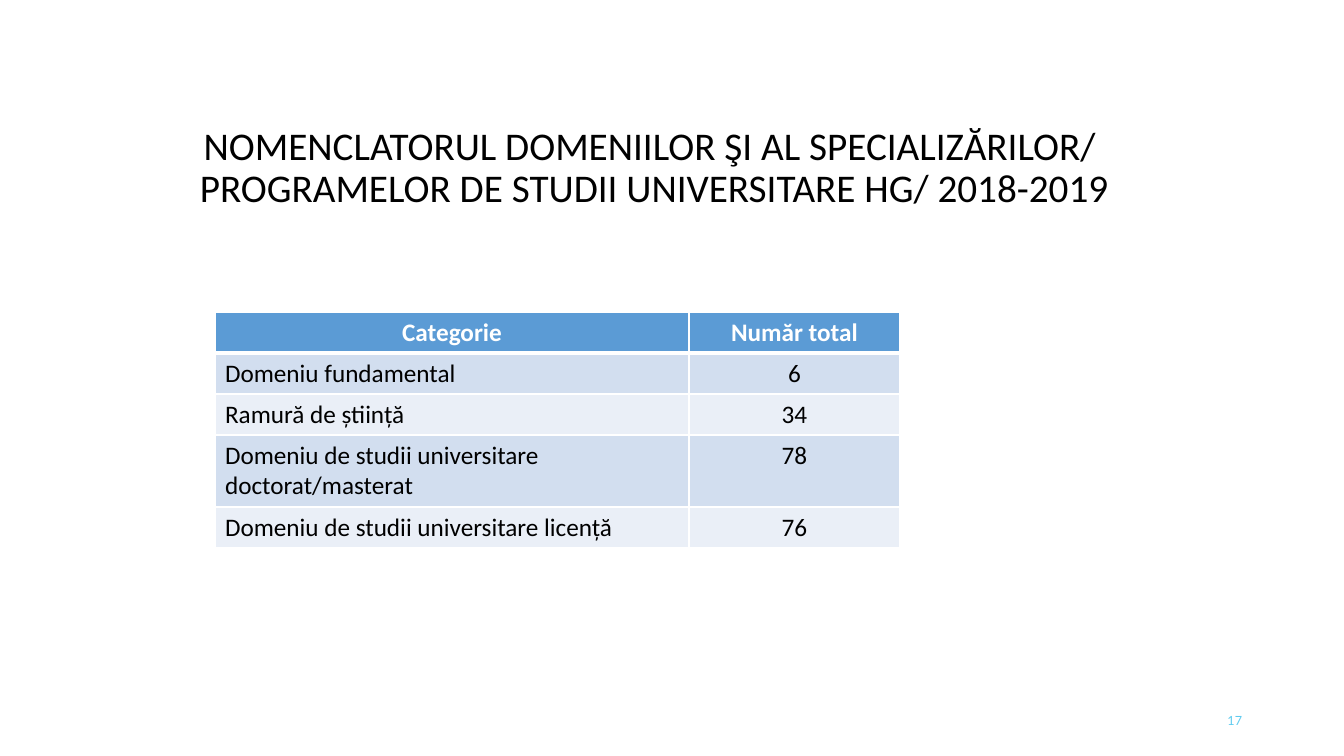
from lxml.etree import SubElement
from pptx import Presentation
from pptx.dml.color import RGBColor
from pptx.enum.text import MSO_ANCHOR as Anchor, MSO_AUTO_SIZE as AutoSize, PP_ALIGN as Align
from pptx.oxml.ns import qn
from pptx.util import Emu, Pt

TITLE = ["NOMENCLATORUL DOMENIILOR ŞI AL SPECIALIZĂRILOR/ ",
         "PROGRAMELOR DE STUDII UNIVERSITARE HG/ 2018-2019"]
ROWS = [
    ("Categorie", "Număr total"),
    ("Domeniu fundamental", "6"),
    ("Ramură de știință", "34"),
    ("Domeniu de studii universitare doctorat/masterat", "78"),
    ("Domeniu de studii universitare licență", "76"),
]
PAGE_NUMBER = "17"

TITLE_BOX = (118, 128, 1072, 81)
NUMBER_BOX = (950, 701, 302, 40)
TABLE_LEFT, TABLE_TOP = 215, 312
COL_WIDTHS = (474, 211)
ROW_HEIGHTS = (41, 41, 41, 72, 41)
HEADER_FILL, BAND_FILLS = "5B9BD5", ("D2DEEF", "EAEFF7")
WHITE, BLACK, CYAN = "FFFFFF", "000000", "5FCBEF"


def px(n):
    return Emu(round(n * 914400 / 100.8))


def rgb(value):
    return RGBColor.from_string(value)


def style(p, size, color, align, name="Calibri", bold=False):
    p.alignment = align
    p.font.size, p.font.name, p.font.bold = Pt(size), name, bold
    p.font.color.rgb = rgb(color)


def set_borders(cell, bottom):
    """Draw white cell borders, 1 pt except for the given bottom width.

    They go ahead of the fill, as the schema orders them."""
    tc_pr = cell._tc.get_or_add_tcPr()
    widths = {"lnL": 1, "lnR": 1, "lnT": 1, "lnB": bottom}
    for i, (tag, width) in enumerate(widths.items()):
        ln = SubElement(tc_pr, qn(f"a:{tag}"), w=str(Pt(width)))
        fill = SubElement(ln, qn("a:solidFill"))
        SubElement(fill, qn("a:srgbClr"), val=WHITE)
        tc_pr.insert(i, ln)


prs = Presentation()
prs.slide_width, prs.slide_height = px(1344), px(756)
s = prs.slides.add_slide(prs.slide_layouts[5])

title = s.shapes.title
title.left, title.top, title.width, title.height = map(px, TITLE_BOX)
tf = title.text_frame
tf.word_wrap, tf.auto_size, tf.vertical_anchor = True, AutoSize.NONE, Anchor.MIDDLE
p = tf.paragraphs[0]
p.text = "\v".join(TITLE)
p.line_spacing = 0.9
style(p, 28, BLACK, Align.CENTER)

frame = s.shapes.add_table(len(ROWS), len(COL_WIDTHS), px(TABLE_LEFT), px(TABLE_TOP),
                           px(sum(COL_WIDTHS)), px(sum(ROW_HEIGHTS)))
table = frame.table
for column, width in zip(table.columns, COL_WIDTHS):
    column.width = px(width)
for r, (row, height) in enumerate(zip(ROWS, ROW_HEIGHTS)):
    table.rows[r].height = px(height)
    header = r == 0
    for c, text in enumerate(row):
        cell = table.cell(r, c)
        cell.text = text
        cell.fill.solid()
        cell.fill.fore_color.rgb = rgb(HEADER_FILL if header else BAND_FILLS[(r - 1) % 2])
        set_borders(cell, bottom=3 if header else 1)
        style(cell.text_frame.paragraphs[0], 18, WHITE if header else BLACK,
              Align.CENTER if header or c else Align.LEFT, bold=header)

number = s.shapes.add_textbox(*map(px, NUMBER_BOX))
tf = number.text_frame
tf.word_wrap, tf.vertical_anchor = True, Anchor.MIDDLE
tf.text = PAGE_NUMBER
style(tf.paragraphs[0], 9, CYAN, Align.RIGHT, name="Lato")

prs.save("out.pptx")
